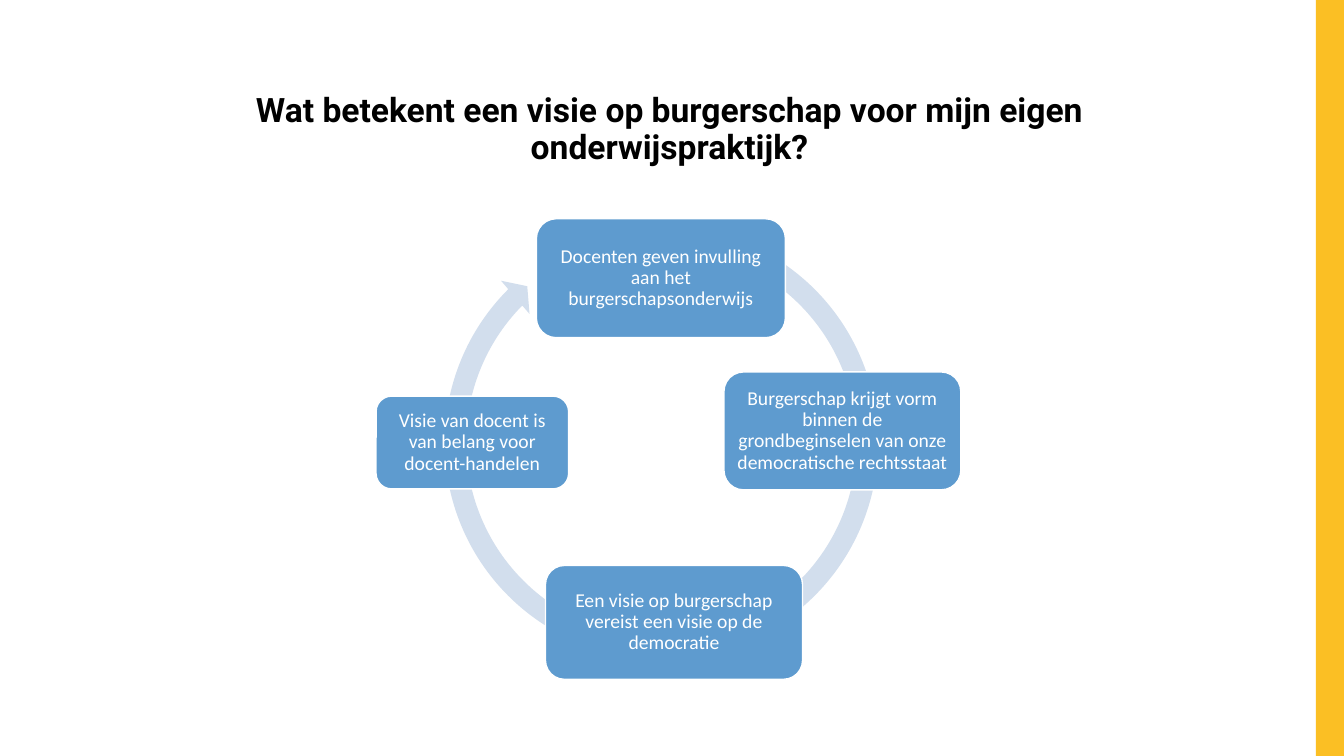
from dataclasses import dataclass

from pptx import Presentation
from pptx.dml.color import RGBColor
from pptx.enum.shapes import MSO_SHAPE
from pptx.enum.text import MSO_ANCHOR, MSO_AUTO_SIZE, PP_ALIGN
from pptx.shapes.autoshape import Shape
from pptx.slide import Slide
from pptx.text.text import TextFrame
from pptx.util import Inches, Pt


@dataclass(frozen=True)
class Theme:
    accent: str = "FBBF24"
    ring: str = "D2DEED"
    step: str = "5E9BCF"
    white: str = "FFFFFF"
    black: str = "000000"
    title_font: str = "Roboto"
    step_font: str = "Calibri"
    title_size: float = 24
    step_size: float = 14
    step_inset: float = 0.06


@dataclass(frozen=True)
class Area:
    left: float
    top: float
    width: float
    height: float

    def lengths(self) -> tuple:
        return tuple(Inches(v) for v in (self.left, self.top, self.width, self.height))


@dataclass(frozen=True)
class Step:
    text: str
    area: Area


THEME = Theme()
SLIDE_WIDTH, SLIDE_HEIGHT = 13.33, 7.5
BAND_WIDTH = 0.28
TITLE = "Wat betekent een visie op burgerschap voor mijn eigen onderwijspraktijk?"
TITLE_AREA = Area(1.36, 0.74, 10.56, 1.1)
RING_AREA = Area(4.3, 2.13, 4.52, 4.52)
# Thickness, head angle, end angle, start angle, head width
RING_ADJUSTMENTS = (0.047, 2.729, 134.889, 175.996, 0.048)
STEPS = (
    Step("Docenten geven invulling aan het burgerschapsonderwijs",
         Area(5.32, 2.17, 2.47, 1.18)),
    Step("Burgerschap krijgt vorm binnen de grondbeginselen van onze "
         "democratische rechtsstaat", Area(7.18, 3.69, 2.35, 1.17)),
    Step("Een visie op burgerschap vereist een visie op de democratie",
         Area(5.41, 5.61, 2.55, 1.13)),
    Step("Visie van docent is van belang voor docent-handelen",
         Area(3.73, 3.93, 1.91, 0.92)),
)


def write_text(frame: TextFrame, text: str, *, font: str, size: float,
               color: str, bold: bool = False) -> None:
    frame.word_wrap = True
    frame.auto_size = MSO_AUTO_SIZE.NONE
    frame.vertical_anchor = MSO_ANCHOR.MIDDLE
    para = frame.paragraphs[0]
    para.alignment = PP_ALIGN.CENTER
    para.line_spacing = 0.9
    para.space_before = Pt(0)
    span = para.add_run()
    span.text = text
    span.font.name = font
    span.font.size = Pt(size)
    span.font.bold = bold
    span.font.color.rgb = RGBColor.from_string(color)


def add_filled_shape(page: Slide, kind: MSO_SHAPE, area: Area, fill: str) -> Shape:
    shape = page.shapes.add_shape(kind, *area.lengths())
    shape.shadow.inherit = False
    shape.fill.solid()
    shape.fill.fore_color.rgb = RGBColor.from_string(fill)
    shape.line.fill.background()
    return shape


def add_title(page: Slide) -> None:
    title = page.shapes.title
    title.left, title.top, title.width, title.height = TITLE_AREA.lengths()
    write_text(title.text_frame, TITLE, font=THEME.title_font,
               size=THEME.title_size, color=THEME.black, bold=True)


def add_ring(page: Slide) -> None:
    ring = add_filled_shape(page, MSO_SHAPE.CIRCULAR_ARROW, RING_AREA, THEME.ring)
    for index, value in enumerate(RING_ADJUSTMENTS):
        ring.adjustments[index] = value


def add_step(page: Slide, step: Step) -> None:
    box = add_filled_shape(page, MSO_SHAPE.ROUNDED_RECTANGLE, step.area, THEME.step)
    box.line.color.rgb = RGBColor.from_string(THEME.white)
    box.line.width = Pt(1)
    frame = box.text_frame
    frame.margin_left = frame.margin_right = Inches(THEME.step_inset)
    frame.margin_top = frame.margin_bottom = Inches(THEME.step_inset)
    write_text(frame, step.text, font=THEME.step_font,
               size=THEME.step_size, color=THEME.white)


def main() -> None:
    deck = Presentation()
    deck.slide_width = Inches(SLIDE_WIDTH)
    deck.slide_height = Inches(SLIDE_HEIGHT)
    page = deck.slides.add_slide(deck.slide_layouts.get_by_name("Title Only"))
    band = Area(SLIDE_WIDTH - BAND_WIDTH, 0, BAND_WIDTH, SLIDE_HEIGHT)
    add_filled_shape(page, MSO_SHAPE.RECTANGLE, band, THEME.accent)
    add_title(page)
    add_ring(page)
    for step in STEPS:
        add_step(page, step)
    deck.save("out.pptx")


if __name__ == "__main__":
    main()
